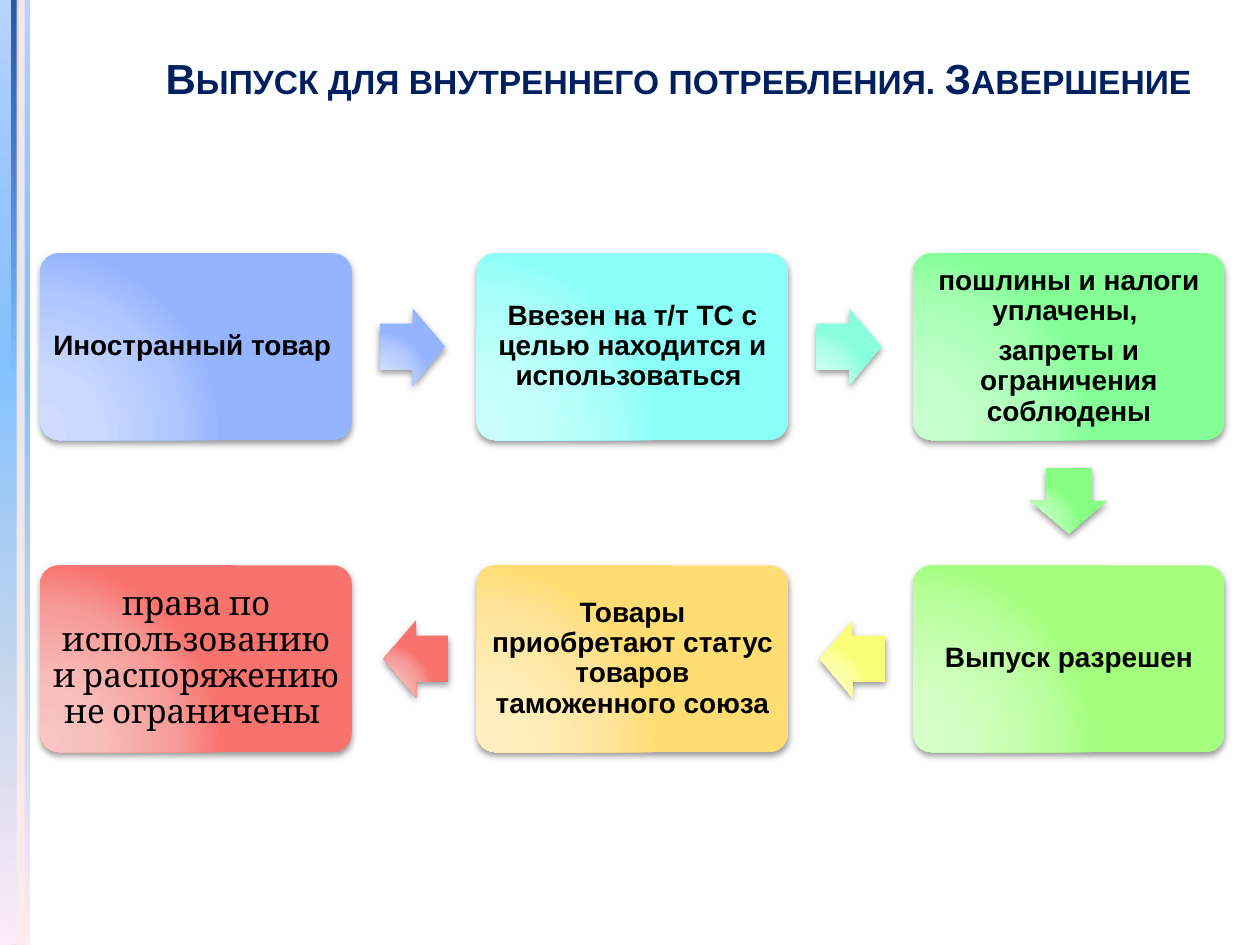
from lxml import etree
from pptx import Presentation
from pptx import util as u
from pptx.dml.color import RGBColor
from pptx.enum import shapes, text
from pptx.oxml import parse_xml
from pptx.oxml.ns import nsdecls, qn

NAVY = RGBColor(0x00, 0x20, 0x60)
BLACK = RGBColor(0x00, 0x00, 0x00)
PEACH = RGBColor(0xFF, 0xED, 0xE8)


def tones(codes):
    """Turn a row of hex codes into colours."""
    return [RGBColor.from_string(code) for code in codes.split()]


SKY = tones("5E9EFF 85C2FF C4D6EB FFEBFA")
BLUE = tones("CFDCFF CBD9FF AFC6FF 95B4FF")
CYAN = tones("CBFFFB C6FFFB A8FFF9 8AFFF7")
AQUA = tones("CAFFEF C5FFED A7FFE5 88FFDD")
MINT = tones("C9FFD0 C3FFCB A4FFB1 83FF96")
GREEN = tones("CAFFC8 C5FFC3 A6FFA2 86FF80")
LIME = tones("D6FFC7 D2FFC2 BBFFA1 A4FF7E")
LEMON = tones("FDFFC3 FDFFBD FCFF9A FBFF75")
GOLD = tones("FFEEC2 FFEDBC FFE498 FFDD72")
RED = tones("F8C5C3 F8BFBD F69B98 F8736E")

SANS = ("Arial", 16, True, 0.03)
SERIF = ("Cambria", 19, False, 0.04)
RIGHT, DOWN, LEFT = (1, 0, 0), (0, 1, 90), (-1, 0, 180)
GLOW = '<a:path path="circle"><a:fillToRect l="5000" t="100000" r="120000" b="10000"/></a:path>'
FALL = '<a:lin ang="5400000" scaled="0"/>'

STEPS = [
    (0, 0, ["Иностранный товар "], SANS, BLUE, RIGHT, BLUE),
    (1, 0, ["Ввезен на т/т ТС с целью находится и использоваться "], SANS, CYAN, RIGHT, AQUA),
    (2, 0, ["пошлины и налоги уплачены, ", "запреты и ограничения соблюдены"],
     SANS, MINT, DOWN, GREEN),
    (2, 1, ["Выпуск разрешен"], SANS, LIME, LEFT, LEMON),
    (1, 1, ["Товары приобретают статус товаров таможенного союза"], SANS, GOLD, LEFT, RED),
    (0, 1, ["права по использованию и распоряжению не ограничены "], SERIF, RED, None, None),
]


def blend(shape, stops, hues, way, alpha=100):
    """Fill a shape with a gradient whose first stop may be see-through."""
    marks = ""
    for num, (stop, hue) in enumerate(zip(stops, hues)):
        clear = f'<a:alpha val="{alpha * 1000}"/>' if num == 0 and alpha < 100 else ""
        marks += f'<a:gs pos="{stop * 1000}"><a:srgbClr val="{hue}">{clear}</a:srgbClr></a:gs>'
    new = parse_xml(f'<a:gradFill {nsdecls("a")} rotWithShape="0">'
                    f"<a:gsLst>{marks}</a:gsLst>{way}</a:gradFill>")
    shape.fill.gradient()
    props = shape.element.spPr
    props.replace(props.find(qn("a:gradFill")), new)
    shape.line.fill.background()
    shape.shadow.inherit = False


def solid(slide, kind, box, hues):
    """Add a glowing shape with a soft shadow under it."""
    shape = slide.shapes.add_shape(kind, *[int(side) for side in box])
    blend(shape, (0, 30, 75, 100), hues, GLOW)
    cast = parse_xml(f'<a:outerShdw {nsdecls("a")} blurRad="{u.Pt(4)}" dist="{u.Pt(2)}" '
                     'dir="5400000" rotWithShape="0"><a:srgbClr val="000000">'
                     '<a:alpha val="40000"/></a:srgbClr></a:outerShdw>')
    shape.element.spPr.find(qn("a:effectLst")).append(cast)
    return shape


def write(shape, lines, style, color):
    """Put centred paragraphs into a shape."""
    face, size, bold, inset = style
    frame = shape.text_frame
    frame.word_wrap = True
    frame.margin_left = frame.margin_right = u.Inches(inset)
    frame.margin_top = frame.margin_bottom = u.Inches(inset)
    frame.vertical_anchor = text.MSO_ANCHOR.MIDDLE
    frame.text = "\n".join(lines)
    for para in frame.paragraphs:
        para.alignment = text.PP_ALIGN.CENTER
        para.line_spacing = 0.9
        para.space_after = u.Pt(0.35 * size)
        for run in para.runs:
            font = run.font
            font.name, font.size, font.bold = face, u.Pt(size), bold
            font.color.rgb = color


def stripe(slide, box, share, color, alpha=100):
    """Draw an upright line at a share of the box's width."""
    left, top, wide, high = box
    x = int(left + share * wide)
    line = slide.shapes.add_connector(shapes.MSO_CONNECTOR.STRAIGHT, x, top, x, top + high)
    line.line.width = u.Pt(4.5)
    line.line.color.rgb = color
    props = line.element.spPr
    etree.SubElement(props, qn("a:effectLst"))
    if alpha < 100:
        hue = props.find(".//" + qn("a:srgbClr"))
        etree.SubElement(hue, qn("a:alpha")).set("val", str(alpha * 1000))


def edge(slide, box):
    """Draw the coloured band and its two lines."""
    stripe(slide, box, 0.5, NAVY)
    band = slide.shapes.add_shape(shapes.MSO_SHAPE.RECTANGLE, *box)
    blend(band, (0, 40, 70, 100), SKY, FALL, 43)
    stripe(slide, box, 0.7, PEACH, 83)


def head(slide, box):
    """Write the title in small capitals at the foot of the box."""
    title = slide.shapes.add_textbox(*box)
    write(title, ["Выпуск для внутреннего потребления. Завершение"],
          ("Arial", 24, True, 0.05), NAVY)
    title.text_frame.vertical_anchor = text.MSO_ANCHOR.BOTTOM
    para = title.text_frame.paragraphs[0]
    para.line_spacing, para.space_after = 1, 0
    para.runs[0].font._element.set("cap", "small")


def flow(slide, box):
    """Lay the steps out on three columns and two rows with arrows between."""
    left, top, wide, high = box
    w = 0.263 * wide
    h = 0.6 * w
    long, broad, gap = 0.21 * w, 0.248 * w, 0.09 * w
    for col, row, lines, style, hues, way, tint in STEPS:
        x = left + col * (wide - w) / 2
        y = top + row * (high - h)
        card = solid(slide, shapes.MSO_SHAPE.ROUNDED_RECTANGLE, (x, y, w, h), hues)
        card.adjustments[0] = 0.1
        write(card, lines, style, BLACK)
        if way:
            dx, dy, turn = way
            mid = x + w / 2 + dx * (w / 2 + gap + long / 2)
            level = y + h / 2 + dy * (h / 2 + gap + long / 2)
            spot = (mid - long / 2, level - broad / 2, long, broad)
            arrow = solid(slide, shapes.MSO_SHAPE.RIGHT_ARROW, spot, tint)
            arrow.adjustments[0], arrow.adjustments[1] = 0.6, 0.5
            arrow.rotation = turn


def main():
    """Build the slide and save it."""
    deck = Presentation()
    deck.slide_width, deck.slide_height = u.Inches(10), u.Inches(7.5)
    wide, high = deck.slide_width, deck.slide_height
    slide = deck.slides.add_slide(deck.slide_layouts[6])

    def area(x, y, w, h):
        """Turn percentages of the slide into a box."""
        return [int(part / 100) for part in (x * wide, y * high, w * wide, h * high)]

    edge(slide, area(0, 0, 2.35, 100))
    head(slide, area(10.9, 0, 85.9, 11.5))
    flow(slide, area(3.2, 26.8, 94, 52.8))
    deck.save("out.pptx")


if __name__ == "__main__":
    main()
